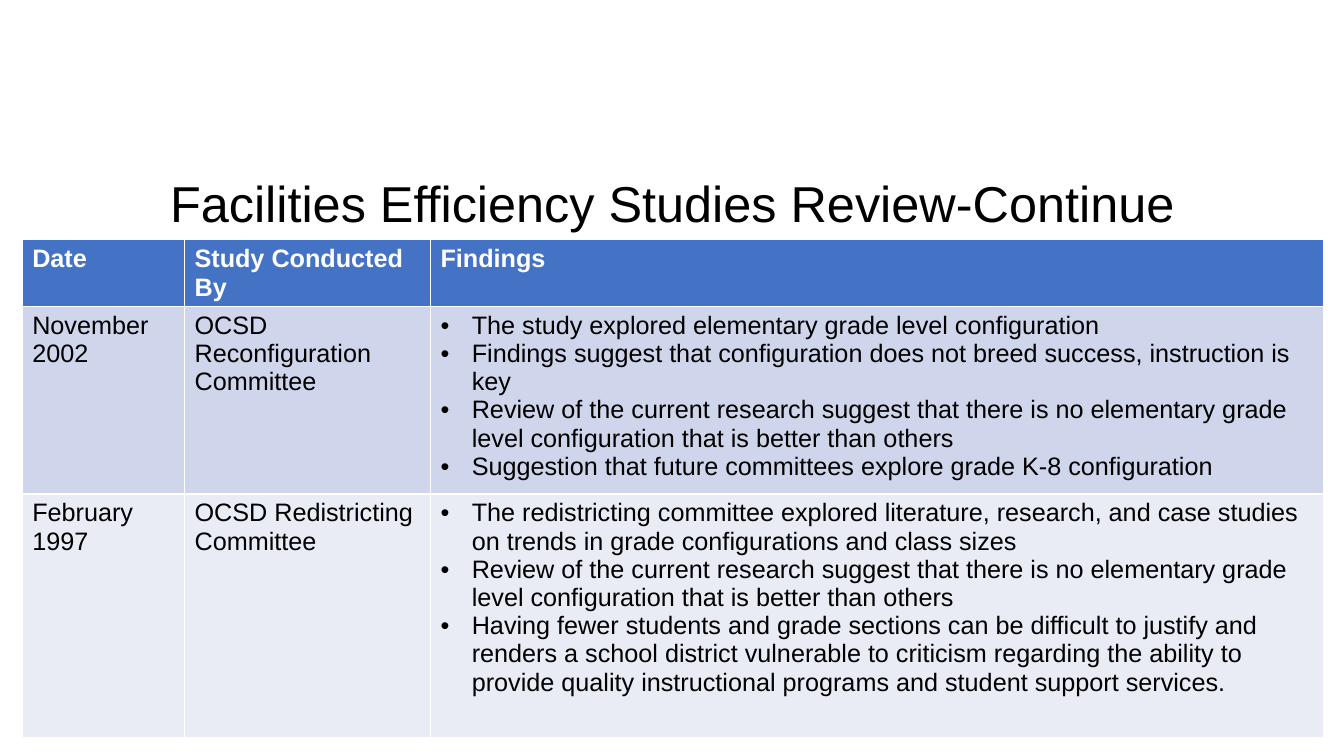
"""Build the facilities efficiency studies slide with its findings table."""
from lxml import etree
from pptx import Presentation
from pptx import util as u
from pptx.dml.color import RGBColor
from pptx.enum import text
from pptx.oxml.ns import qn

PX = 9144
BLACK = RGBColor(0x00, 0x00, 0x00)
WHITE = RGBColor(0xFF, 0xFF, 0xFF)
BLUE = RGBColor(0x44, 0x72, 0xC4)
BLUE_TINT = RGBColor(0xCF, 0xD5, 0xEA)
PALE_TINT = RGBColor(0xE9, 0xEB, 0xF5)
BULLET_INDENT = 31

COLUMN_WIDTHS = [161, 244, 886]
ROW_HEIGHTS = [54, 186, 242]
ROW_FILLS = [BLUE, BLUE_TINT, PALE_TINT]
SHARED_FINDING = (
    "Review of the current research suggest that there is no elementary grade "
    "level configuration that is better than others"
)
STUDIES = [
    ("Date", "Study Conducted By", ["Findings"]),
    ("November 2002", "OCSD Reconfiguration Committee", [
        "The study explored elementary grade level configuration",
        "Findings suggest that configuration does not breed success, instruction is key",
        SHARED_FINDING,
        "Suggestion that future committees explore grade K-8 configuration",
    ]),
    ("February 1997", "OCSD Redistricting Committee", [
        "The redistricting committee explored literature, research, and case studies "
        "on trends in grade configurations and class sizes",
        SHARED_FINDING,
        "Having fewer students and grade sections can be difficult to justify and "
        "renders a school district vulnerable to criticism regarding the ability to "
        "provide quality instructional programs and student support services.",
    ]),
]


def write(frame, lines, size=18, color=BLACK, bold=False, bullets=False):
    """Fill a text frame with one formatted paragraph per line."""
    for index, line in enumerate(lines):
        para = frame.add_paragraph() if index else frame.paragraphs[0]
        if bullets:
            properties = para._p.get_or_add_pPr()
            properties.set("marL", str(BULLET_INDENT * PX))
            properties.set("indent", str(-BULLET_INDENT * PX))
            bullet_color = etree.SubElement(properties, qn("a:buClr"))
            etree.SubElement(bullet_color, qn("a:srgbClr"), val=str(color))
            etree.SubElement(properties, qn("a:buFont"), typeface="Arial")
            etree.SubElement(properties, qn("a:buChar"), char="•")
        span = para.add_run()
        span.text = line
        span.font.name = "Arial"
        span.font.size = u.Pt(size)
        span.font.bold = bold
        span.font.color.rgb = color


deck = Presentation()
deck.slide_width = 1333 * PX
deck.slide_height = 750 * PX
page = deck.slides.add_slide(deck.slide_layouts[5])

title = page.shapes.title
title.left, title.top, title.width, title.height = (
    length * PX for length in (126, 172, 1082, 66))
title.text_frame.auto_size = text.MSO_AUTO_SIZE.NONE
title.text_frame.vertical_anchor = text.MSO_ANCHOR.MIDDLE
write(title.text_frame, ["Facilities Efficiency Studies Review-Continue"], size=36)
title.text_frame.paragraphs[0].alignment = text.PP_ALIGN.CENTER
title.text_frame.paragraphs[0].line_spacing = 0.9

table = page.shapes.add_table(
    len(ROW_HEIGHTS), len(COLUMN_WIDTHS), 22 * PX, 238 * PX,
    sum(COLUMN_WIDTHS) * PX, sum(ROW_HEIGHTS) * PX).table
for column, width in zip(table.columns, COLUMN_WIDTHS):
    column.width = width * PX

for number, (row, study) in enumerate(zip(table.rows, STUDIES)):
    header = number == 0
    row.height = ROW_HEIGHTS[number] * PX
    date, author, findings = study
    for cell, lines in zip(row.cells, ([date], [author], findings)):
        cell.fill.solid()
        cell.fill.fore_color.rgb = ROW_FILLS[number]
        write(cell.text_frame, lines, color=WHITE if header else BLACK,
              bold=header, bullets=lines is findings and not header)

deck.save("out.pptx")
